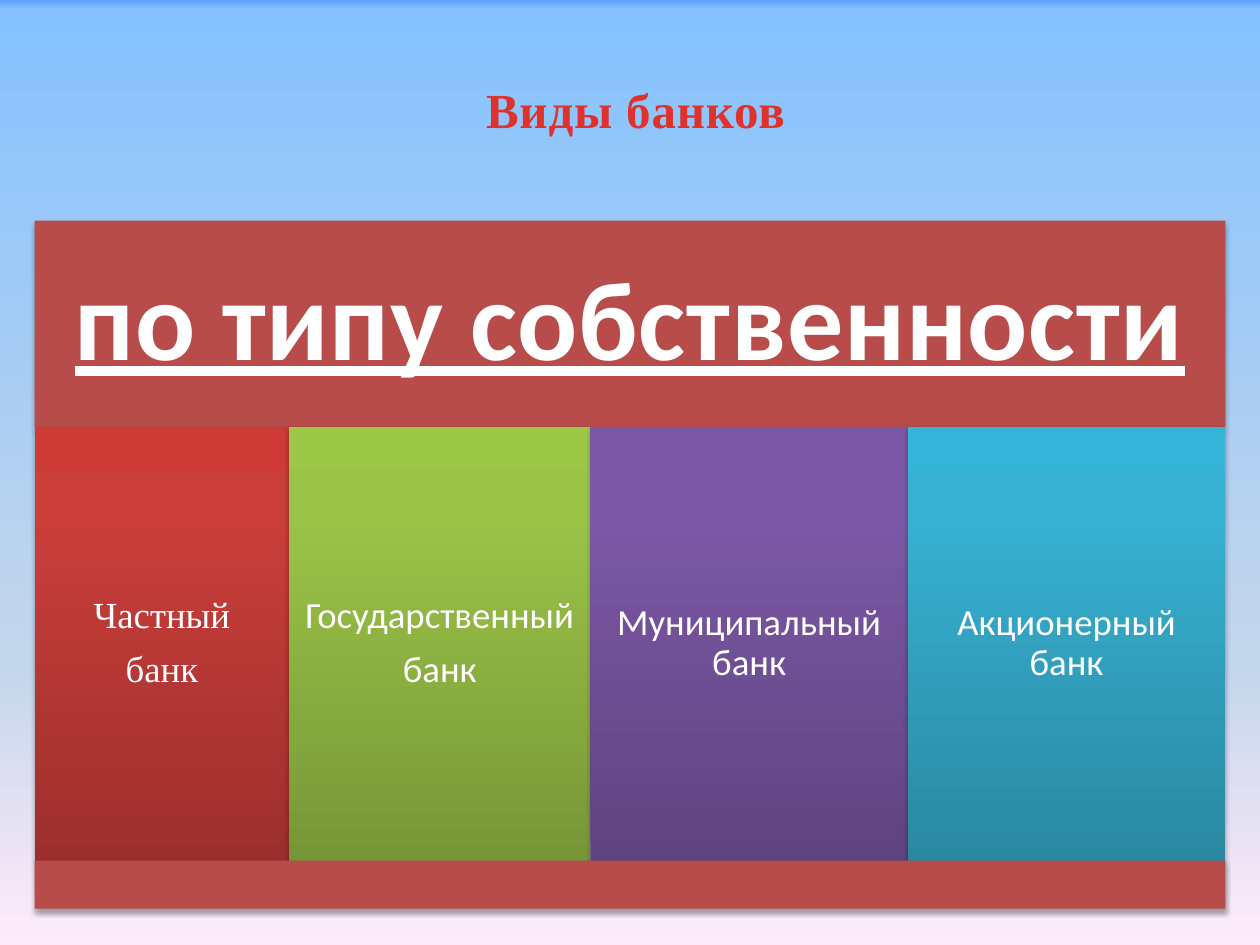
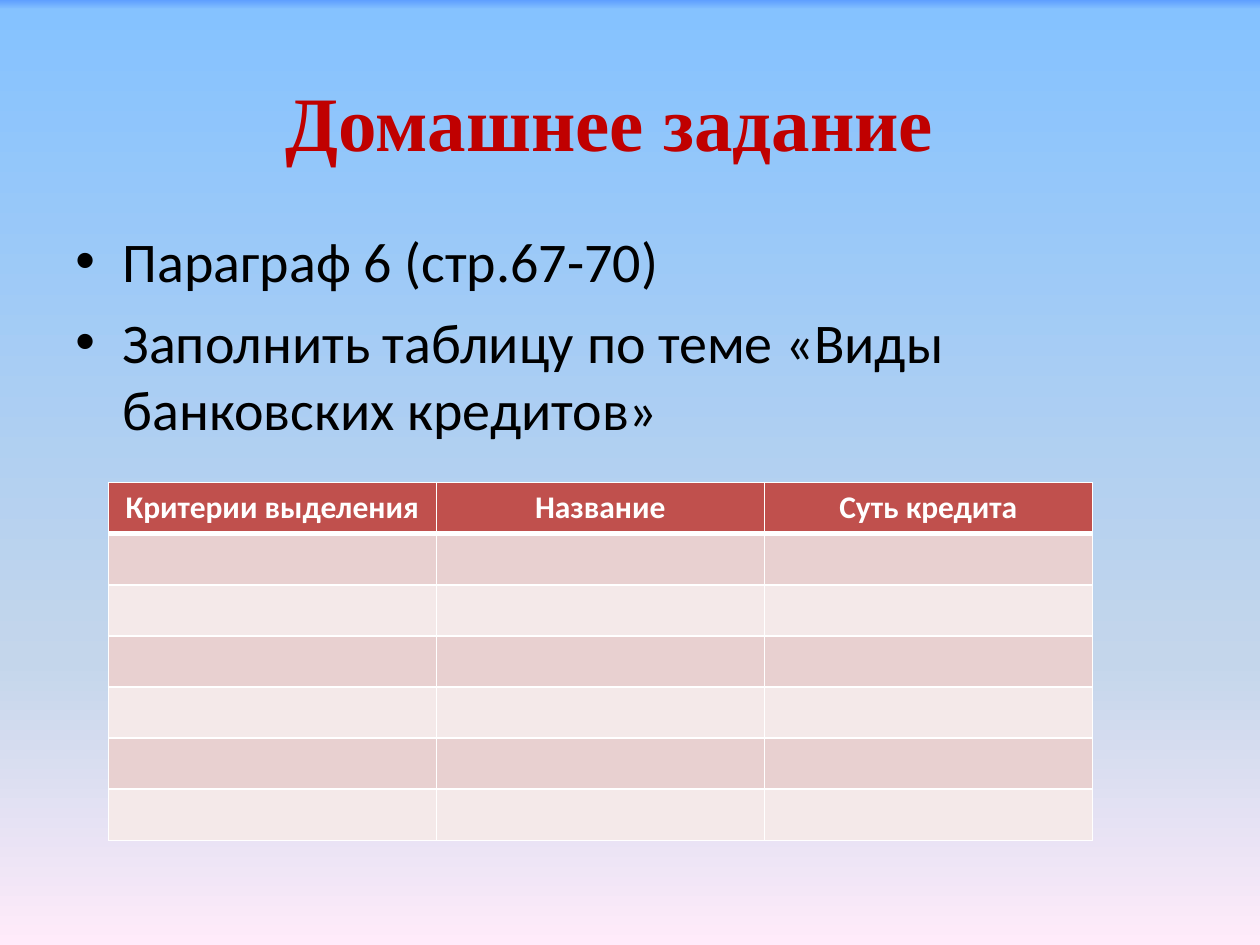
from itertools import accumulate

from lxml import etree
from pptx import Presentation
from pptx import util as u
from pptx.dml.color import RGBColor
from pptx.enum import shapes, text
from pptx.oxml.ns import qn

COLORS = {
    "title": "E0322D",
    "homework": "C00000",
    "panel": "B74C4A",
    "white": "FFFFFF",
    "black": "000000",
    "header": "C0504D",
    "odd_row": "E8D0D0",
    "even_row": "F4E9E9",
}
SKY = [(0, "5E9EFF"), (1, "85C2FF"), (70, "C4D6EB"), (100, "FFEBFA")]
SERIF, SANS = "Times New Roman", "Calibri"
BANKS = [
    (["Частный", "банк"], 145.4, SERIF, ("9C2F2D", "CB3E3A", "CE3B37")),
    (["Государственный", "банк"], 172.2, SANS, ("779737", "9BC348", "9DC746")),
    (["Муниципальный банк"], 181.4, SANS, ("5F4480", "7B58A6", "7C57A8")),
    (["Акционерный банк"], 181.4, SANS, ("2A88A2", "37B1D2", "34B4D6")),
]


def rgb(name):
    return RGBColor.from_string(COLORS[name])


def add_child(parent, tag, **attributes):
    child = etree.SubElement(parent, qn(tag))
    for key, value in attributes.items():
        child.set(key, str(value))
    return child


def set_gradient(holder, stops, angle):
    solid = holder.find(qn("a:solidFill"))
    gradient = etree.Element(qn("a:gradFill"), rotWithShape="1")
    stop_list = add_child(gradient, "a:gsLst")
    for position, color in stops:
        stop = add_child(stop_list, "a:gs", pos=position * 1000)
        add_child(stop, "a:srgbClr", val=color)
    add_child(gradient, "a:lin", ang=angle * 60000, scaled=0)
    holder.replace(solid, gradient)


def format_text(paragraph, font, size, color, bold=False, underline=False, spacing=0):
    for run in paragraph.runs:
        run.font.name = font
        run.font.size = u.Pt(size)
        run.font.bold = bold
        run.font.underline = underline
        run.font.color.rgb = rgb(color)
        if spacing:
            run.font._element.set("spc", str(int(spacing * 100)))


def add_titled_slide(presentation, title, box, **style):
    slide = presentation.slides.add_slide(presentation.slide_layouts[5])
    slide.background.fill.solid()
    set_gradient(slide._element.find(".//" + qn("p:bgPr")), SKY, 90)
    shape = slide.shapes.title
    shape.left, shape.top, shape.width, shape.height = map(u.Pt, box)
    frame = shape.text_frame
    frame.text = title
    frame.auto_size = text.MSO_AUTO_SIZE.NONE
    frame.vertical_anchor = text.MSO_ANCHOR.MIDDLE
    paragraph = frame.paragraphs[0]
    paragraph.alignment = text.PP_ALIGN.CENTER
    format_text(paragraph, SERIF, bold=True, **style)
    return slide


def add_block(slide, box, lines=(), margin=6.5, stops=None, **style):
    shape = slide.shapes.add_shape(shapes.MSO_SHAPE.RECTANGLE, *map(u.Pt, box))
    shape.line.fill.background()
    shape.fill.solid()
    shape.fill.fore_color.rgb = rgb("panel")
    properties = shape._element.spPr
    if stops:
        set_gradient(properties, stops, 270)
    shape.shadow.inherit = False
    shadow = add_child(properties.find(qn("a:effectLst")), "a:outerShdw",
                       blurRad=u.Pt(3.1), dist=u.Pt(1.8), dir=90 * 60000, rotWithShape=0)
    add_child(add_child(shadow, "a:srgbClr", val=COLORS["black"]), "a:alpha", val=35000)
    if not lines:
        return
    frame = shape.text_frame
    frame.word_wrap = True
    frame.vertical_anchor = text.MSO_ANCHOR.MIDDLE
    frame.margin_left = frame.margin_right = u.Pt(margin)
    frame.margin_top = frame.margin_bottom = u.Pt(margin)
    frame.text = "\n".join(lines)
    for paragraph in frame.paragraphs:
        paragraph.alignment = text.PP_ALIGN.CENTER
        paragraph.line_spacing = 0.9
        paragraph.space_after = u.Pt(8)
        format_text(paragraph, color="white", **style)


def add_bank_panel(slide, box):
    left, top, width, height = box
    header, footer = 118, 27.4
    body = height - header - footer
    add_block(slide, (left, top, width, header), ["по типу собственности"], margin=19.4,
              font=SANS, size=64, bold=True, underline=True, spacing=0.5)
    offsets = accumulate((bank[1] for bank in BANKS), initial=0)
    for offset, (lines, column, font, shades) in zip(offsets, BANKS):
        add_block(slide, (left + offset, top + header, column, body), lines,
                  stops=list(zip((0, 80, 100), shades)), font=font, size=21)
    add_block(slide, (left, top + height - footer, width, footer))


def add_tasks(slide, box, tasks):
    frame = slide.shapes.add_textbox(*map(u.Pt, box)).text_frame
    frame.word_wrap = True
    frame.text = "\n".join(tasks)
    for index, paragraph in enumerate(frame.paragraphs):
        properties = paragraph._p.get_or_add_pPr()
        properties.set("marL", str(u.Pt(27)))
        properties.set("indent", str(u.Pt(-27)))
        add_child(properties, "a:buFont", typeface="Arial")
        add_child(properties, "a:buChar", char="•")
        if index:
            paragraph.space_before = u.Pt(7.5)
        format_text(paragraph, SANS, 32, "black")


def set_borders(cell, bottom):
    properties = cell._tc.get_or_add_tcPr()
    widths = {"a:lnL": 1, "a:lnR": 1, "a:lnT": 1, "a:lnB": bottom}
    for index, (tag, width) in enumerate(widths.items()):
        line = etree.Element(qn(tag), w=str(u.Pt(width)))
        add_child(add_child(line, "a:solidFill"), "a:srgbClr", val=COLORS["white"])
        properties.insert(index, line)


def add_credit_table(slide, box, headings, row_count):
    table = slide.shapes.add_table(row_count, len(headings), *map(u.Pt, box)).table
    for row_index, row in enumerate(table.rows):
        row.height = u.Pt(box[3] / row_count)
        fill = "header" if row_index == 0 else "odd_row" if row_index % 2 else "even_row"
        for cell in row.cells:
            cell.fill.solid()
            cell.fill.fore_color.rgb = rgb(fill)
            set_borders(cell, 1 if row_index else 3)
    for cell, heading in zip(table.rows[0].cells, headings):
        cell.text = heading
        paragraph = cell.text_frame.paragraphs[0]
        paragraph.alignment = text.PP_ALIGN.CENTER
        format_text(paragraph, SANS, 18, "white", bold=True)


def build_bank_types(presentation):
    slide = add_titled_slide(presentation, "Виды банков", (42.5, 20.9, 641.5, 82.8),
                             size=28, color="title", spacing=0.5)
    add_bank_panel(slide, (19.8, 126, 680.4, 393.2))


def build_homework(presentation):
    slide = add_titled_slide(presentation, "Домашнее задание", (22.3, 22.3, 652.3, 93.6),
                             size=44, color="homework")
    add_tasks(slide, (36, 126, 648, 356.4),
              ["Параграф 6 (стр.67-70)", "Заполнить таблицу по теме «Виды банковских кредитов»"])
    add_credit_table(slide, (61.9, 275.8, 562.3, 204.5),
                     ["Критерии выделения", "Название", "Суть кредита"], 7)


def main():
    presentation = Presentation()
    presentation.slide_width, presentation.slide_height = u.Pt(720), u.Pt(540)
    build_bank_types(presentation)
    build_homework(presentation)
    presentation.save("out.pptx")


if __name__ == "__main__":
    main()
